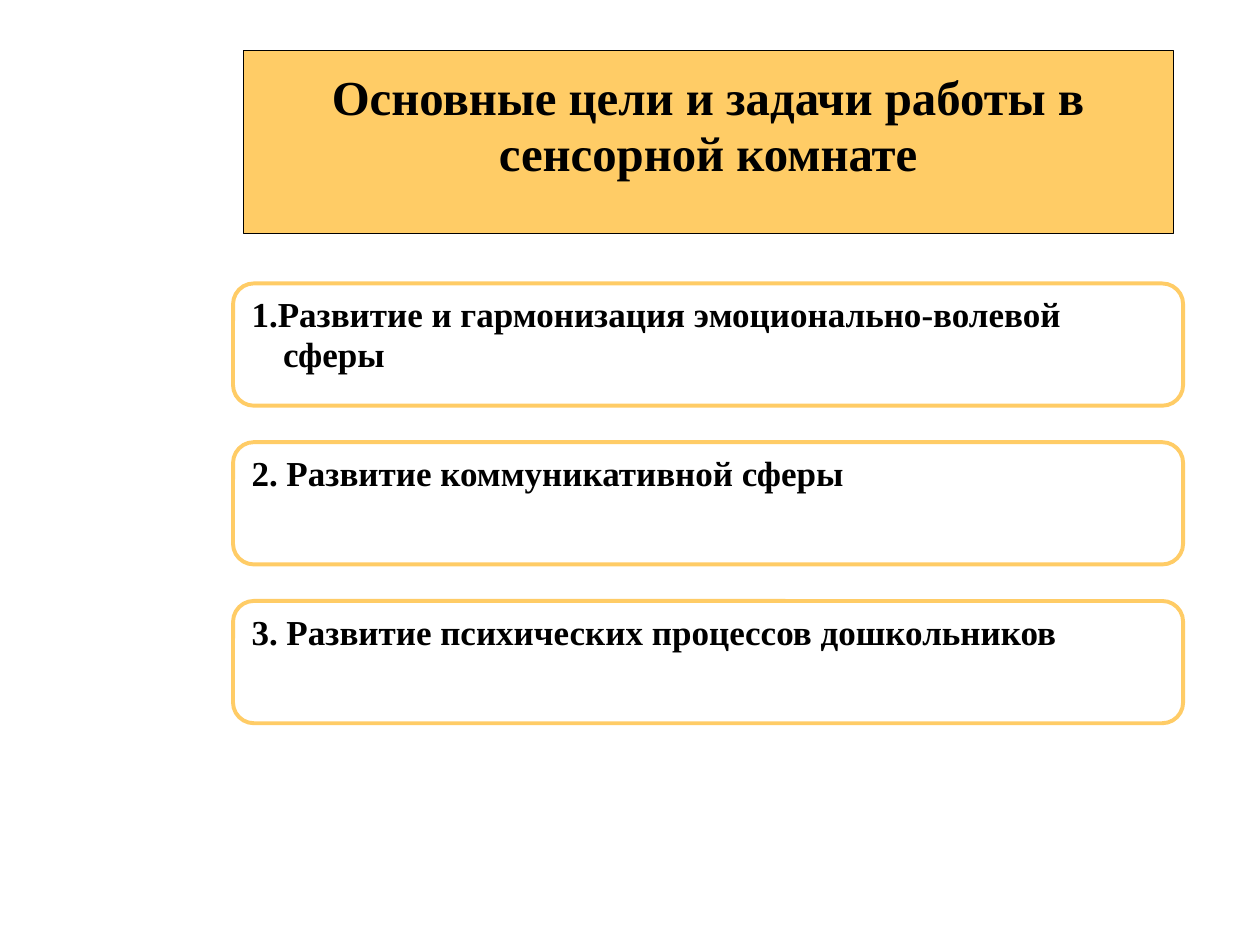
from pptx import Presentation
from pptx import util as u
from pptx.dml import color
from pptx.enum import shapes, text

# Content
TITLE = "Основные цели и задачи работы в сенсорной комнате"
GOALS = [
    "1.Развитие и гармонизация эмоционально-волевой сферы",
    "2. Развитие коммуникативной сферы",
    "3. Развитие психических процессов дошкольников",
]

THEME = dict(font="Times New Roman", ink="000000", paper="FFFFFF",
             accent="FFCC66", title_size=27.9, goal_size=20, spacing=0.95)

# Layout in inches
TITLE_BOX = (1.93, 0.4, 7.38, 1.45)
GOAL_LEFT, GOAL_TOP, GOAL_W, GOAL_H = 1.85, 2.25, 7.54, 0.97
GOAL_PITCH = 1.26
HANG = 0.25


def rgb(value):
    return color.RGBColor.from_string(value)


def add_box(s, box, fill, line, width, corner):
    sp = s.shapes.add_shape(shapes.MSO_SHAPE.ROUNDED_RECTANGLE,
                            *(u.Inches(v) for v in box))
    sp.adjustments[0] = corner
    sp.shadow.inherit = False
    sp.fill.solid()
    sp.fill.fore_color.rgb = rgb(fill)
    sp.line.color.rgb = rgb(line)
    sp.line.width = u.Pt(width)
    return sp


def write(sp, content, *, size, align, anchor, hang=0, bottom=0.05):
    tf = sp.text_frame
    tf.word_wrap = True
    tf.vertical_anchor = anchor
    tf.margin_bottom = u.Inches(bottom)
    p = tf.paragraphs[0]
    p.alignment = align
    p.line_spacing = THEME["spacing"]
    if hang:
        pPr = p._p.get_or_add_pPr()
        pPr.set("marL", str(u.Inches(hang)))
        pPr.set("indent", str(-u.Inches(hang)))
    r = p.add_run()
    r.text = content
    r.font.name = THEME["font"]
    r.font.size = u.Pt(size)
    r.font.bold = True
    r.font.color.rgb = rgb(THEME["ink"])


prs = Presentation()
prs.slide_width, prs.slide_height = u.Inches(10), u.Inches(7.5)
s = prs.slides.add_slide(prs.slide_layouts[6])

# Title panel, text raised slightly above the middle
panel = add_box(s, TITLE_BOX, THEME["accent"], THEME["ink"], 0.5, 0)
write(panel, TITLE, size=THEME["title_size"], align=text.PP_ALIGN.CENTER,
      anchor=text.MSO_ANCHOR.MIDDLE, bottom=0.29)

# Goal cards
for i, goal in enumerate(GOALS):
    box = (GOAL_LEFT, GOAL_TOP + i * GOAL_PITCH, GOAL_W, GOAL_H)
    card = add_box(s, box, THEME["paper"], THEME["accent"], 2.25, 0.17)
    write(card, goal, size=THEME["goal_size"], align=text.PP_ALIGN.LEFT,
          anchor=text.MSO_ANCHOR.TOP, hang=HANG)

prs.save("out.pptx")
